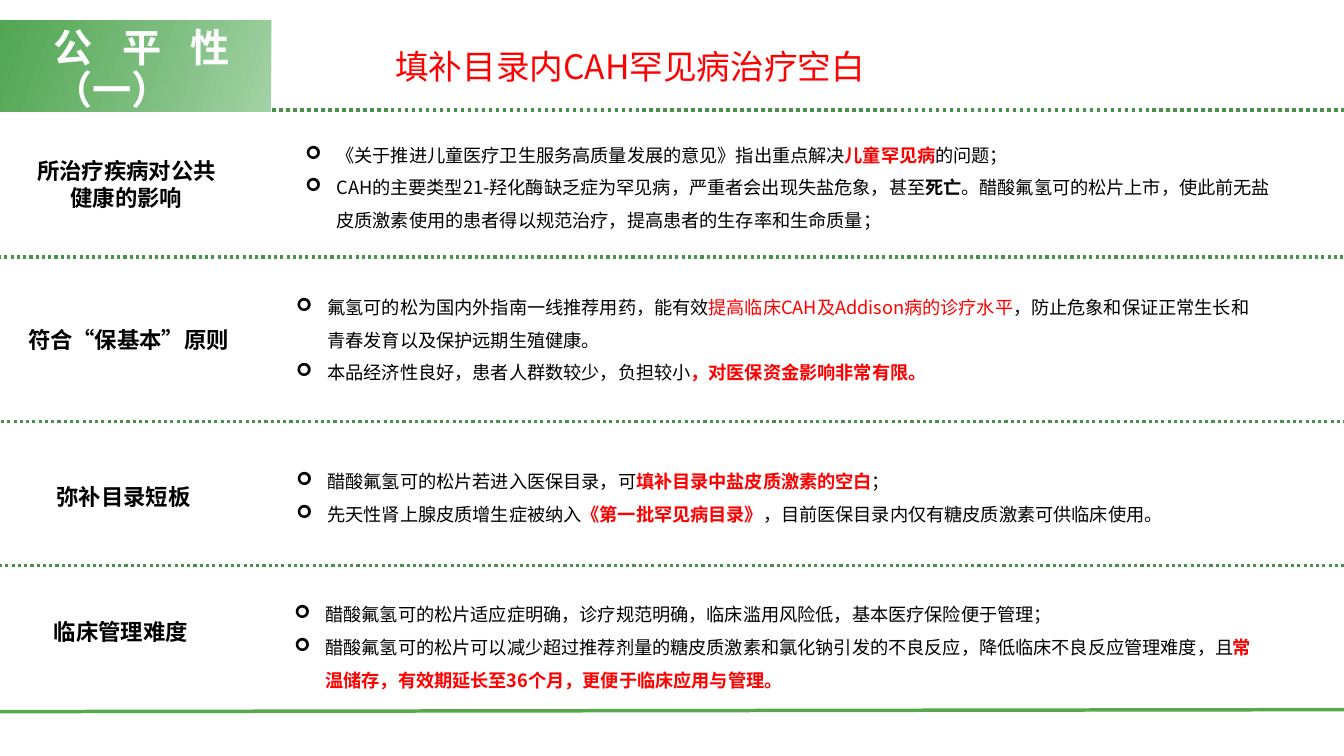
from copy import deepcopy
from dataclasses import dataclass

from lxml.etree import SubElement
from pptx import Presentation
from pptx.dml.color import RGBColor
from pptx.enum.dml import MSO_LINE
from pptx.enum.shapes import MSO_CONNECTOR, MSO_SHAPE
from pptx.enum.text import MSO_ANCHOR, MSO_AUTO_SIZE, PP_ALIGN
from pptx.oxml.ns import qn
from pptx.util import Pt

PX = 9144
FONT = "Noto Sans CJK SC"
COLORS = {
    "black": "000000",
    "red": "FF0000",
    "white": "FFFFFF",
    "dots": "479249",
    "footer": "56A949",
    "light": "A3D2A4",
    "mid": "7ABC7C",
    "dark": "51A653",
}

Box = tuple[int, int, int, int]


@dataclass(frozen=True)
class Span:
    text: str
    color: str = "black"
    bold: bool = False


@dataclass(frozen=True)
class Section:
    label: str
    label_box: Box
    align: PP_ALIGN
    body_box: Box
    bullets: list[list[Span]]


@dataclass(frozen=True)
class Rule:
    start: tuple[int, int]
    end: tuple[int, int]
    color: str = "dots"
    width: float = 2.25
    dotted: bool = True


SECTIONS = [
    Section("所治疗疾病对公共健康的影响", (16, 151, 219, 68), PP_ALIGN.CENTER, (293, 127, 980, 119), [
        [Span("《关于推进儿童医疗卫生服务高质量发展的意见》指出重点解决"),
         Span("儿童罕见病", "red", True), Span("的问题；")],
        [Span("CAH的主要类型21-羟化酶缺乏症为罕见病，严重者会出现失盐危象，甚至"),
         Span("死亡", bold=True),
         Span("。醋酸氟氢可的松片上市，使此前无盐皮质激素使用的患者得以规范治疗，提高患者的生存率和生命质量；")],
    ]),
    Section("符合“保基本”原则", (18, 319, 237, 34), PP_ALIGN.LEFT, (284, 278, 980, 121), [
        [Span("氟氢可的松为国内外指南一线推荐用药，能有效"),
         Span("提高临床CAH及Addison病的诊疗水平", "red"),
         Span("，防止危象和保证正常生长和青春发育以及保护远期生殖健康。")],
        [Span("本品经济性良好，患者人群数较少，负担较小"),
         Span("，对医保资金影响非常有限。", "red", True)],
    ]),
    Section("弥补目录短板", (33, 474, 179, 34), PP_ALIGN.CENTER, (284, 451, 969, 68), [
        [Span("醋酸氟氢可的松片若进入医保目录，可"),
         Span("填补目录中盐皮质激素的空白", "red", True), Span("；")],
        [Span("先天性肾上腺皮质增生症被纳⼊"), Span("《第⼀批罕见病目录》", "red", True),
         Span("，⽬前医保⽬录内仅有糖皮质激素可供临床使⽤。")],
    ]),
    Section(" 临床管理难度", (8, 608, 219, 34), PP_ALIGN.CENTER, (282, 583, 969, 103), [
        [Span("醋酸氟氢可的松片适应症明确，诊疗规范明确，临床滥用风险低，基本医疗保险便于管理；")],
        [Span("醋酸氟氢可的松片可以减少超过推荐剂量的糖皮质激素和氯化钠引发的不良反应，降低临床不良反应管理难度，且"),
         Span("常温储存，有效期延长至36个月，更便于临床应用与管理。", "red", True)],
    ]),
]

RULES = [
    Rule((-5, 706), (1338, 704), "footer", 2.5, False),
    Rule((270, 109), (1335, 109), width=2.5),
    Rule((-2, 255), (1333, 255)),
    Rule((1, 418), (1336, 418)),
    Rule((-1, 561), (1335, 561)),
]


def rgb(name: str) -> RGBColor:
    return RGBColor.from_string(COLORS[name])


def place(shape, box: Box) -> None:
    shape.left, shape.top, shape.width, shape.height = (v * PX for v in box)


def format_run(r, size: int, color: str, bold: bool) -> None:
    r.font.size = Pt(size)
    r.font.bold = bold
    r.font.color.rgb = rgb(color)
    r.font.name = FONT
    SubElement(r._r.get_or_add_rPr(), qn("a:ea")).set("typeface", FONT)


def add_text_frame(s, box: Box):
    tf = s.shapes.add_textbox(*(v * PX for v in box)).text_frame
    tf.word_wrap = True
    return tf


def write_line(tf, span: Span, size: int, align: PP_ALIGN, spacing: float = 1.0) -> None:
    tf.text = span.text
    p = tf.paragraphs[0]
    p.alignment = align
    p.line_spacing = spacing
    format_run(p.runs[0], size, span.color, span.bold)


def write_bullet(p, spans: list[Span]) -> None:
    p.line_spacing = 1.5
    pPr = p._p.get_or_add_pPr()
    pPr.set("marL", str(31 * PX))
    pPr.set("indent", str(-31 * PX))
    SubElement(pPr, qn("a:buFont")).set("typeface", "Wingdings")
    SubElement(pPr, qn("a:buChar")).set("char", "➢")
    for span in spans:
        r = p.add_run()
        r.text = span.text
        format_run(r, 13, span.color, span.bold)


def add_section(s, section: Section) -> None:
    label = add_text_frame(s, section.label_box)
    write_line(label, Span(section.label, bold=True), 16, section.align)
    tf = add_text_frame(s, section.body_box)
    for i, spans in enumerate(section.bullets):
        write_bullet(tf.add_paragraph() if i else tf.paragraphs[0], spans)


def add_rule(s, rule: Rule) -> None:
    points = (v * PX for v in rule.start + rule.end)
    line = s.shapes.add_connector(MSO_CONNECTOR.STRAIGHT, *points)
    line.line.color.rgb = rgb(rule.color)
    line.line.width = Pt(rule.width)
    if rule.dotted:
        line.line.dash_style = MSO_LINE.ROUND_DOT
    SubElement(line._element.spPr, qn("a:effectLst"))


def add_badge(s) -> None:
    sp = s.shapes.add_shape(MSO_SHAPE.RECTANGLE, *(v * PX for v in (0, 20, 269, 91)))
    sp.shadow.inherit = False
    sp.line.fill.background()
    sp.fill.gradient()
    sp.fill.gradient_angle = 160
    stops = sp._element.spPr.find(qn("a:gradFill")).find(qn("a:gsLst"))
    stops.insert(1, deepcopy(stops[0]))
    for stop, (position, color) in zip(sp.fill.gradient_stops, [(0, "light"), (0.47, "mid"), (1, "dark")]):
        stop.position = position
        stop.color.rgb = rgb(color)
    tf = add_text_frame(s, (43, 38, 195, 64))
    tf.vertical_anchor = MSO_ANCHOR.MIDDLE
    write_line(tf, Span("公平性（一） ", "white", True), 28, PP_ALIGN.JUSTIFY, 0.9)


def add_title(s) -> None:
    title = s.shapes.title
    place(title, (382, 30, 804, 77))
    tf = title.text_frame
    tf.auto_size = MSO_AUTO_SIZE.NONE
    tf.vertical_anchor = MSO_ANCHOR.MIDDLE
    write_line(tf, Span("填补目录内CAH罕见病治疗空白", "red"), 24, PP_ALIGN.LEFT, 0.9)


def main() -> None:
    prs = Presentation()
    prs.slide_width, prs.slide_height = 1333 * PX, 750 * PX
    s = prs.slides.add_slide(prs.slide_layouts[5])
    add_title(s)
    for section in SECTIONS:
        add_section(s, section)
    for rule in RULES:
        add_rule(s, rule)
    add_badge(s)
    prs.save("out.pptx")


if __name__ == "__main__":
    main()
